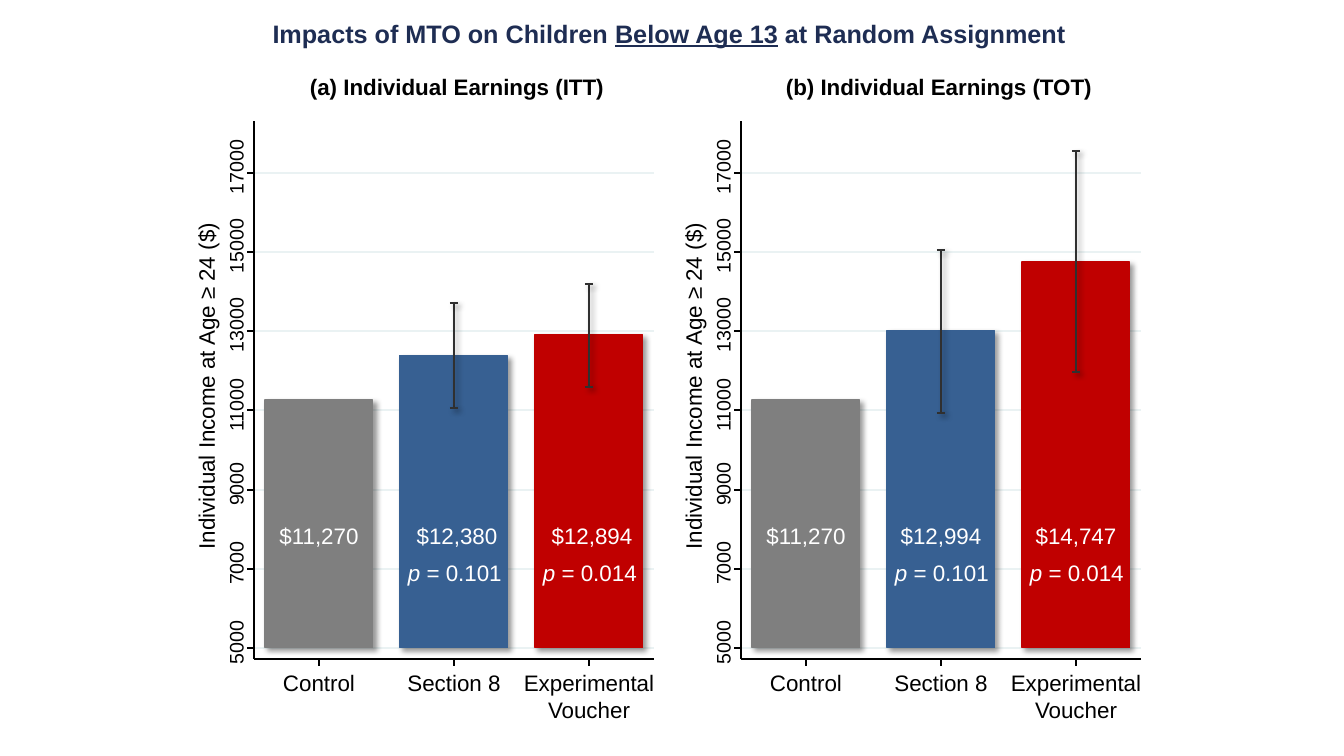
from dataclasses import dataclass

from lxml.etree import SubElement
from pptx import Presentation
from pptx.dml.color import RGBColor
from pptx.enum.shapes import MSO_CONNECTOR, MSO_SHAPE
from pptx.enum.text import MSO_ANCHOR, MSO_AUTO_SIZE, PP_ALIGN
from pptx.oxml.ns import qn
from pptx.util import Pt

EMU_PER_PX = 12192000 / 1344
FONT = "Arial"
COLORS = {
    "title": "1E2D53",
    "text": "000000",
    "label": "FFFFFF",
    "grid": "EAF2F3",
    "axis": "000000",
    "error": "303030",
    "shadow": "000000",
    "control": "7F7F7F",
    "section": "376092",
    "voucher": "C00000",
}
GROUPS = [
    ("control", ["Control"]),
    ("section", ["Section 8"]),
    ("voucher", ["Experimental", "Voucher"]),
]
TICKS = range(5000, 17001, 2000)
PX_PER_DOLLAR = 0.0396
BAR_WIDTH = 108
BAR_PITCH = 135
FIRST_CENTER = 65
BASE_GAP = 11


@dataclass
class Bar:
    value: int
    low: int = 0
    high: int = 0
    p_value: str = ""
    label_shift: int = 0


def px(length):
    return round(length * EMU_PER_PX)


def color(name):
    return RGBColor.from_string(COLORS[name])


def style_font(font, size, color_name, bold=False):
    font.name = FONT
    font.size = Pt(size)
    font.bold = bold
    font.color.rgb = color(color_name)


def add_shadow(effects):
    shadow = SubElement(effects, qn("a:outerShdw"), blurRad=str(Pt(4)), dist=str(Pt(3)),
                        dir="2700000", algn="tl", rotWithShape="0")
    tint = SubElement(shadow, qn("a:srgbClr"), val=COLORS["shadow"])
    SubElement(tint, qn("a:alpha"), val="40000")


def add_line(page, start, end, color_name, width, shadow=False):
    points = [px(length) for length in (*start, *end)]
    line = page.shapes.add_connector(MSO_CONNECTOR.STRAIGHT, *points)
    line.line.color.rgb = color(color_name)
    line.line.width = Pt(width)
    effects = SubElement(line._element.spPr, qn("a:effectLst"))
    if shadow:
        add_shadow(effects)


def add_text(page, box, lines, size, color_name="text", bold=False,
             align=PP_ALIGN.CENTER, inset=0, wrap=False, rotation=0):
    shape = page.shapes.add_textbox(*[px(length) for length in box])
    shape.rotation = rotation
    frame = shape.text_frame
    frame.word_wrap = wrap
    frame.margin_left = frame.margin_right = px(inset)
    frame.margin_top = frame.margin_bottom = px(inset / 2)
    for index, line in enumerate(lines):
        para = frame.add_paragraph() if index else frame.paragraphs[0]
        para.text = line
        para.alignment = align
        style_font(para.font, size, color_name, bold)
    return frame


def add_vertical_text(page, center_x, center_y, width, height, text, size):
    box = (center_x - width / 2, center_y - height / 2, width, height)
    add_text(page, box, [text], size, align=PP_ALIGN.LEFT, rotation=270)


def add_title(page, box):
    title = page.shapes.title
    title.left, title.top, title.width, title.height = [px(length) for length in box]
    frame = title.text_frame
    frame.auto_size = MSO_AUTO_SIZE.NONE
    frame.vertical_anchor = MSO_ANCHOR.TOP
    frame.word_wrap = True
    para = frame.paragraphs[0]
    para.alignment = PP_ALIGN.CENTER
    style_font(para.font, 18, "title", bold=True)
    for text, underline in [("Impacts of MTO on Children ", False),
                            ("Below Age 13", True),
                            (" at Random Assignment", False)]:
        span = para.add_run()
        span.text = text
        span.font.underline = underline


def add_bar(page, center, base, color_name, bar, height_of):
    left = center - BAR_WIDTH / 2
    top = height_of(bar.value)
    column = page.shapes.add_shape(
        MSO_SHAPE.RECTANGLE, px(left), px(top), px(BAR_WIDTH), px(base - top))
    column.fill.solid()
    column.fill.fore_color.rgb = color(color_name)
    column.line.color.rgb = color(color_name)
    column.line.width = Pt(0)
    column.shadow.inherit = False
    add_shadow(column._element.spPr.find(qn("a:effectLst")))

    if bar.p_value:
        low, high = height_of(bar.low), height_of(bar.high)
        add_line(page, (center, high), (center, low), "error", 1.25, shadow=True)
        for end in (low, high):
            add_line(page, (center - 4, end), (center + 4, end), "error", 1.25, shadow=True)
        frame = add_text(page, (left - 2, base - 94, 122, 37), ["p"], 16, "label",
                         align=PP_ALIGN.LEFT, inset=10, wrap=True)
        para = frame.paragraphs[0]
        para.runs[0].font.italic = True
        para.add_run().text = f" = {bar.p_value}"

    add_text(page, (left + bar.label_shift, base - 131, BAR_WIDTH, 37),
             [f"${bar.value:,}"], 16, "label", inset=10, wrap=True)


def add_panel(page, box, heading, heading_center, bars):
    left, top, width, height = box
    right, bottom = left + width, top + height
    base = bottom - BASE_GAP

    def height_of(value):
        return round(base - (value - TICKS[0]) * PX_PER_DOLLAR)

    for tick in TICKS:
        y = height_of(tick)
        add_line(page, (left, y), (right, y), "grid", 1.25)
        add_line(page, (left, y), (left - 7, y), "axis", 0.88)
        add_vertical_text(page, left - 18, y - 6, 11 * len(str(tick)), 24, str(tick), 14)

    for index, ((color_name, category), bar) in enumerate(zip(GROUPS, bars)):
        center = left + FIRST_CENTER + index * BAR_PITCH
        add_bar(page, center, base, color_name, bar, height_of)
        add_line(page, (center, bottom), (center, bottom + 7), "axis", 0.88)
        add_text(page, (center - 69, bottom + 10, 138, 27 * len(category)), category, 16)

    add_line(page, (left, bottom), (left, top), "axis", 0.88)
    add_line(page, (left, bottom), (right, bottom), "axis", 0.88)
    add_vertical_text(page, left - 48, top + 263, 331, 27,
                      "Individual Income at Age ≥ 24 ($)", 16)
    add_text(page, (left + heading_center - 165, top - 53, 330, 37), [heading], 16,
             bold=True, inset=10)


def main():
    deck = Presentation()
    deck.slide_width, deck.slide_height = px(1344), px(756)
    page = deck.slides.add_slide(deck.slide_layouts[5])
    add_title(page, (165, 13, 1008, 40))
    add_panel(page, (254, 121, 400, 538), "(a) Individual Earnings (ITT)", 203, [
        Bar(11270),
        Bar(12380, 11060, 13700, "0.101", 3),
        Bar(12894, 11590, 14190, "0.014", 3),
    ])
    add_panel(page, (741, 121, 400, 538), "(b) Individual Earnings (TOT)", 198, [
        Bar(11270),
        Bar(12994, 10930, 15050, "0.101"),
        Bar(14747, 11970, 17550, "0.014"),
    ])
    deck.save("out.pptx")


if __name__ == "__main__":
    main()
